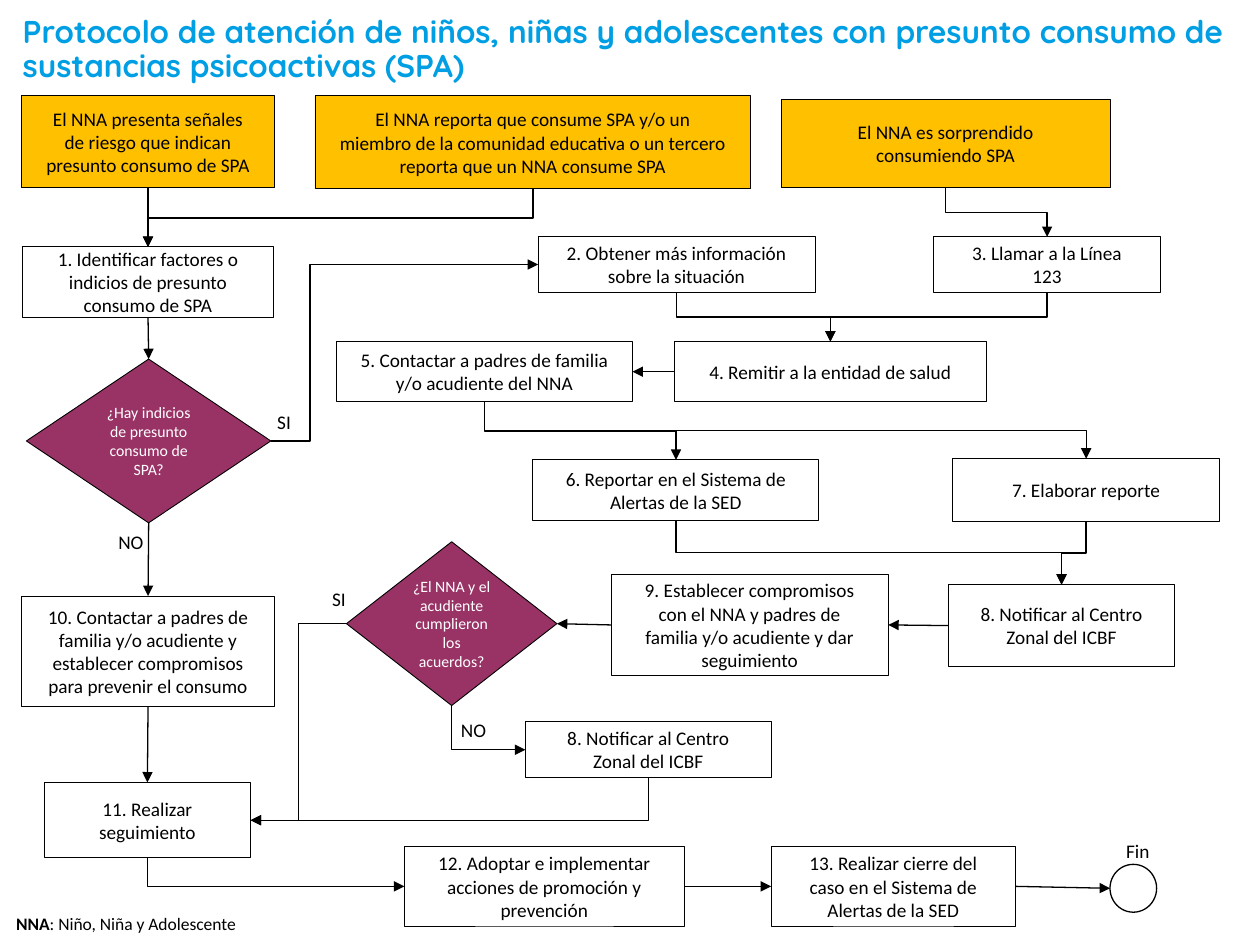
from lxml import etree
from pptx import Presentation
from pptx.dml.color import RGBColor
from pptx.enum.shapes import MSO_CONNECTOR, MSO_SHAPE
from pptx.enum.text import MSO_ANCHOR, PP_ALIGN
from pptx.oxml.ns import qn
from pptx.util import Inches, Pt

RECTANGLE, DIAMOND, CIRCLE = MSO_SHAPE.RECTANGLE, MSO_SHAPE.DIAMOND, MSO_SHAPE.OVAL
STRAIGHT, ELBOW = MSO_CONNECTOR.STRAIGHT, MSO_CONNECTOR.ELBOW
LEFT, CENTER = PP_ALIGN.LEFT, PP_ALIGN.CENTER
TOP, MIDDLE = MSO_ANCHOR.TOP, MSO_ANCHOR.MIDDLE

BLACK = RGBColor(0, 0, 0)
WHITE = RGBColor(0xFF, 0xFF, 0xFF)
AMBER = RGBColor(0xFF, 0xC0, 0x00)
PLUM = RGBColor(0x99, 0x33, 0x66)
SKY = RGBColor(0x00, 0x9F, 0xE3)

# The slide is a grid of 100 columns by 75 rows of square cells.
COLUMNS, ROWS = 100, 75
CELL = Inches(0.1)

# Regions and parts: left, top, width, height in cells.
TITLE_BOX = (1.1, 0.9, 98, 6.5)
TRIGGER_BOX = (1.7, 7.6, 86.4, 7.4)
FLOW_BOX = (1.7, 18.8, 95.1, 54.7)
LEGEND_BOX = (0.3, 72, 22.1, 2.7)

TRIGGERS = {
    "signs": ((0, 0, 20.1, 7.3),
              "El NNA presenta señales de riesgo que indican presunto consumo de SPA"),
    "report": ((23.3, 0, 34.6, 7.4),
               "El NNA reporta que consume SPA y/o un miembro de la comunidad educativa "
               "o un tercero reporta que un NNA consume SPA"),
    "caught": ((60.3, 0.3, 26.1, 7),
               "El NNA es sorprendido consumiendo SPA"),
}
STEPS = {
    "identify": ((0.1, 0.8, 19.9, 5.6),
                 "1. Identificar factores o indicios de presunto consumo de SPA"),
    "inquire": ((41, 0, 22, 4.4), "2. Obtener más información sobre la situación"),
    "call": ((72.4, 0, 18, 4.4), "3. Llamar a la Línea 123"),
    "refer": ((51.8, 8.3, 24.8, 4.8), "4. Remitir a la entidad de salud"),
    "parents": ((25, 8.3, 23.5, 4.8),
                "5. Contactar a padres de familia y/o acudiente del NNA"),
    "alert": ((40.6, 17.7, 22.7, 4.8), "6. Reportar en el Sistema de Alertas de la SED"),
    "write": ((73.9, 17.6, 21.2, 5), "7. Elaborar reporte"),
    "notify": ((73.6, 27.6, 17.9, 6.5), "8. Notificar al Centro Zonal del ICBF"),
    "commit": ((46.8, 26.8, 22, 8),
               "9. Establecer compromisos con el NNA y padres de familia y/o acudiente "
               "y dar seguimiento"),
    "renotify": ((40, 38.5, 19.5, 4.4), "8. Notificar al Centro Zonal del ICBF"),
    "prevent": ((0, 28.5, 20.1, 8.8),
                "10. Contactar a padres de familia y/o acudiente y establecer "
                "compromisos para prevenir el consumo"),
    "follow": ((1.8, 43.3, 16.4, 6), "11. Realizar seguimiento"),
    "promote": ((30.4, 48.4, 22.2, 6.3),
                "12. Adoptar e implementar acciones de promoción y prevención"),
    "close": ((59.5, 48.4, 19.4, 6.3),
              "13. Realizar cierre del caso en el Sistema de Alertas de la SED"),
}
DECISIONS = {
    "signs?": ((0.4, 9.7, 19.4, 13), "¿Hay indicios de presunto consumo de SPA?"),
    "kept?": ((25.8, 24.2, 16.7, 13),
              "¿El NNA y el acudiente cumplieron los acuerdos?"),
}
END_CIRCLE = (86.4, 49.8, 3.7, 3.8)
LABELS = [
    ("SI", (18.7, 13.3, 4.3, 2.4), CENTER, TOP),
    ("NO", (6.7, 22.8, 4.8, 2.8), LEFT, TOP),
    ("SI", (23, 27.3, 4.4, 2.8), CENTER, TOP),
    ("NO", (33.9, 37.7, 4.8, 2.8), LEFT, TOP),
    ("Fin", (85.6, 47.7, 6, 2), CENTER, MIDDLE),
]
# From, side, to, side, share of the way at which the line turns.
LINKS = [
    ("signs", "bottom", "identify", "top", 0.5),
    ("report", "bottom", "identify", "top", 0.5),
    ("caught", "bottom", "call", "top", 0.5),
    ("identify", "bottom", "signs?", "top", 0.5),
    ("signs?", "right", "inquire", "left", 0.146),
    ("signs?", "bottom", "prevent", "top", 0.5),
    ("inquire", "bottom", "refer", "top", 0.5),
    ("call", "bottom", "refer", "top", 0.5),
    ("refer", "left", "parents", "right", 0.5),
    ("parents", "bottom", "alert", "top", 0.5),
    ("parents", "bottom", "write", "top", 0.5),
    ("alert", "bottom", "notify", "top", 0.5),
    ("write", "bottom", "notify", "top", 0.5),
    ("notify", "left", "commit", "right", 0.5),
    ("commit", "left", "kept?", "right", 0.5),
    ("kept?", "left", "follow", "right", 0.5),
    ("kept?", "bottom", "renotify", "left", 0.5),
    ("renotify", "bottom", "follow", "right", 0.5),
    ("prevent", "bottom", "follow", "top", 0.5),
    ("follow", "bottom", "promote", "left", 0.5),
    ("promote", "right", "close", "left", 0.5),
    ("close", "right", "end", "left", 0.5),
]
# Each side: connection site and its place as shares of width and height.
SIDES = {"top": (0, 0.5, 0), "left": (1, 0, 0.5),
         "bottom": (2, 0.5, 1), "right": (3, 1, 0.5)}
CIRCLE_LEFT_SITE = 2


def within(region, part):
    """Slide lengths of a part whose place is relative to its region."""
    left, top, width, height = part
    cells = (region[0] + left, region[1] + top, width, height)
    return [round(length * CELL) for length in cells]


def write(shape, text, size, color, align=CENTER, anchor=MIDDLE, font="Calibri", bold=False):
    frame = shape.text_frame
    frame.text = text
    frame.word_wrap = True
    frame.vertical_anchor = anchor
    para = frame.paragraphs[0]
    para.alignment = align
    para.font.name, para.font.size, para.font.bold = font, Pt(size), bold
    para.font.color.rgb = color
    return para


def set_insets(shape, across, down):
    frame = shape.text_frame
    frame.margin_left = frame.margin_right = Inches(across)
    frame.margin_top = frame.margin_bottom = Inches(down)


def add_node(page, kind, place, fill=None, line_width=0.5):
    node = page.shapes.add_shape(kind, *place)
    node.shadow.inherit = False
    if fill is None:
        node.fill.background()
    else:
        node.fill.solid()
        node.fill.fore_color.rgb = fill
    node.line.color.rgb = BLACK
    node.line.width = Pt(line_width)
    return node


def draw_boxes(page, region, boxes, fill=None):
    nodes = {}
    for name, (part, text) in boxes.items():
        nodes[name] = add_node(page, RECTANGLE, within(region, part), fill)
        write(nodes[name], text, 11, BLACK)
        set_insets(nodes[name], 0.18, 0.09)
    return nodes


def draw_flow(page, region):
    nodes = draw_boxes(page, region, STEPS)
    for name, (part, text) in DECISIONS.items():
        nodes[name] = add_node(page, DIAMOND, within(region, part), PLUM)
        write(nodes[name], text, 9, WHITE)
    nodes["end"] = add_node(page, CIRCLE, within(region, END_CIRCLE), line_width=0.75)
    for text, part, align, anchor in LABELS:
        write(page.shapes.add_textbox(*within(region, part)), text, 11, BLACK, align, anchor)
    return nodes


def side_point(node, side):
    _, across, down = SIDES[side]
    return round(node.left + across * node.width), round(node.top + down * node.height)


def turn_downwards(connector, start, finish):
    """Make an elbow leave its start downwards instead of sideways."""
    (x1, y1), (x2, y2) = start, finish
    length, breadth = abs(y2 - y1), abs(x2 - x1)
    connector.left, connector.top = (x1 + x2 - length) // 2, (y1 + y2 - breadth) // 2
    connector.width, connector.height = length, breadth
    frame = connector.element.spPr.xfrm
    frame.rot, frame.flipH, frame.flipV = (270, True, False) if x2 > x1 else (90, False, False)


def draw_link(page, nodes, source, source_side, target, target_side, turn):
    start = side_point(nodes[source], source_side)
    finish = side_point(nodes[target], target_side)
    downwards, ends_down = source_side == "bottom", target_side == "top"
    offset = min(abs(finish[0] - start[0]), abs(finish[1] - start[1]))
    straight = offset < CELL / 4 and downwards == ends_down
    connector = page.shapes.add_connector(STRAIGHT if straight else ELBOW, *start, *finish)
    connector.begin_connect(nodes[source], SIDES[source_side][0])
    connector.end_connect(nodes[target],
                          CIRCLE_LEFT_SITE if target == "end" else SIDES[target_side][0])
    connector.end_x, connector.end_y = finish
    connector.line.color.rgb = BLACK
    connector.line.width = Pt(0.75)
    properties = connector.element.spPr
    etree.SubElement(properties.find(qn("a:ln")), qn("a:tailEnd"), type="triangle")
    etree.SubElement(properties, qn("a:effectLst"))
    if straight:
        return
    if downwards:
        turn_downwards(connector, start, finish)
    geometry = properties.find(qn("a:prstGeom"))
    if downwards != ends_down:
        geometry.set("prst", "bentConnector2")
    elif turn != 0.5:
        etree.SubElement(geometry.find(qn("a:avLst")), qn("a:gd"),
                         name="adj1", fmla=f"val {round(turn * 100000)}")


def draw_title(page, region):
    title = page.shapes.add_textbox(*within(region, (0, 0, *region[2:])))
    para = write(title, "Protocolo de atención de niños, niñas y adolescentes con presunto "
                 "consumo de sustancias psicoactivas (SPA)", 18, SKY, LEFT, TOP, "Quicksand", True)
    para.line_spacing = 0.9
    set_insets(title, 0.07, 0.04)


def draw_legend(page, region):
    legend = page.shapes.add_textbox(*within(region, (0, 0, *region[2:])))
    para = write(legend, "NNA", 10, BLACK, LEFT, TOP)
    para.runs[0].font.bold = True
    para.add_run().text = ": Niño, Niña y Adolescente"


def main():
    deck = Presentation()
    deck.slide_width, deck.slide_height = COLUMNS * CELL, ROWS * CELL
    page = deck.slides.add_slide(deck.slide_layouts[6])
    draw_title(page, TITLE_BOX)
    nodes = draw_boxes(page, TRIGGER_BOX, TRIGGERS, AMBER)
    nodes.update(draw_flow(page, FLOW_BOX))
    for link in LINKS:
        draw_link(page, nodes, *link)
    draw_legend(page, LEGEND_BOX)
    deck.save("out.pptx")


if __name__ == "__main__":
    main()
